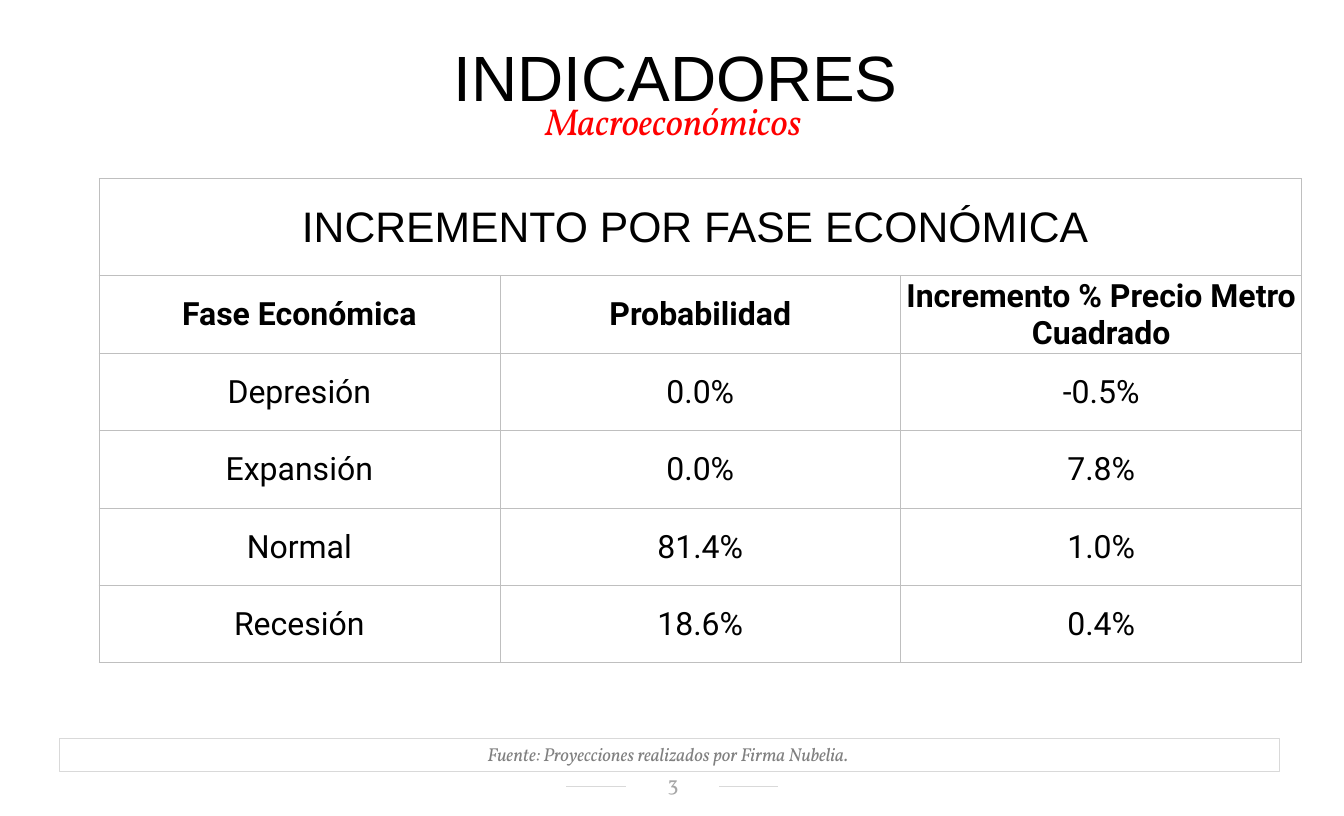
import dataclasses
import pptx
import pptx.dml.color
import pptx.enum.shapes
import pptx.enum.text
import pptx.oxml
import pptx.oxml.ns
import pptx.util

COLUMNS, ROWS = 140, 85
COLORS = {
    "black": "000000",
    "red": "FF0000",
    "source": "808080",
    "number": "A6A6A6",
    "rule": "D9D9D9",
    "border": "BFBFBF",
}
TOP = pptx.enum.text.MSO_ANCHOR.TOP
MIDDLE = pptx.enum.text.MSO_ANCHOR.MIDDLE


@dataclasses.dataclass(frozen=True)
class Area:
    column: float
    row: float
    columns: float
    rows: float


@dataclasses.dataclass(frozen=True)
class Style:
    font: str
    size: float
    color: str
    bold: bool = False
    italic: bool = False


TITLE = Style("Arial", 48, "black")
SUBTITLE = Style("Vollkorn", 28, "red", italic=True)
SOURCE = Style("Vollkorn", 14, "source", italic=True)
NUMBER = Style("Vollkorn", 16, "number")
CAPTION = Style("Arial", 32, "black")
HEADING = Style("Roboto", 24, "black", bold=True)
VALUE = Style("Roboto", 24, "black")

PHASES = [
    ("Fase Económica", "Probabilidad", "Incremento % Precio Metro Cuadrado"),
    ("Depresión", "0.0%", "-0.5%"),
    ("Expansión", "0.0%", "7.8%"),
    ("Normal", "81.4%", "1.0%"),
    ("Recesión", "18.6%", "0.4%"),
]

deck = pptx.Presentation()
deck.slide_width = pptx.util.Inches(14)
deck.slide_height = pptx.util.Inches(8.5)


def across(columns: float) -> int:
    return round(deck.slide_width * columns / COLUMNS)


def down(rows: float) -> int:
    return round(deck.slide_height * rows / ROWS)


def bounds(area: Area) -> tuple[int, int, int, int]:
    return across(area.column), down(area.row), across(area.columns), down(area.rows)


def rgb(name: str) -> pptx.dml.color.RGBColor:
    return pptx.dml.color.RGBColor.from_string(COLORS[name])


def write(frame, text: str, style: Style, anchor=TOP):
    frame.word_wrap = True
    frame.vertical_anchor = anchor
    para = frame.paragraphs[0]
    para.alignment = pptx.enum.text.PP_ALIGN.CENTER
    span = para.add_run()
    span.text = text
    span.font.name = style.font
    span.font.size = pptx.util.Pt(style.size)
    span.font.bold = style.bold
    span.font.italic = style.italic
    span.font.color.rgb = rgb(style.color)
    return para


def add_text(page, area: Area, text: str, style: Style, anchor=TOP):
    box = page.shapes.add_textbox(*bounds(area))
    write(box.text_frame, text, style, anchor)
    return box


def add_title(page, area: Area, text: str) -> None:
    title = page.shapes.title
    title.left, title.top, title.width, title.height = bounds(area)
    frame = title.text_frame
    frame.auto_size = pptx.enum.text.MSO_AUTO_SIZE.NONE
    frame.margin_left = frame.margin_right = pptx.util.Inches(0.13)
    frame.margin_top = frame.margin_bottom = pptx.util.Inches(0.07)
    write(frame, text, TITLE).line_spacing = 0.7


def add_rule(page, start: float, end: float, row: float) -> None:
    rule = page.shapes.add_connector(
        pptx.enum.shapes.MSO_CONNECTOR.STRAIGHT,
        across(start), down(row), across(end), down(row),
    )
    rule.line.color.rgb = rgb("rule")
    rule.line.width = pptx.util.Pt(0.5)
    rule._element.spPr.append(
        pptx.oxml.parse_xml(f'<a:effectLst {pptx.oxml.ns.nsdecls("a")}/>')
    )


def add_source(page, area: Area, text: str) -> None:
    box = page.shapes.add_shape(
        pptx.enum.shapes.MSO_SHAPE.RECTANGLE, *bounds(area)
    )
    box.shadow.inherit = False
    box.fill.background()
    box.line.color.rgb = rgb("rule")
    box.line.width = pptx.util.Pt(0.75)
    write(box.text_frame, text, SOURCE)


def set_borders(cell) -> None:
    properties = cell._tc.get_or_add_tcPr()
    for position, side in enumerate(("lnL", "lnR", "lnT", "lnB")):
        border = pptx.oxml.parse_xml(
            f'<a:{side} {pptx.oxml.ns.nsdecls("a")} w="{pptx.util.Pt(0.5)}">'
            f'<a:solidFill><a:srgbClr val="{COLORS["border"]}"/></a:solidFill>'
            f"</a:{side}>"
        )
        properties.insert(position, border)


def add_phase_table(page, area: Area, caption: str, caption_rows: float) -> None:
    count = len(PHASES[0])
    table = page.shapes.add_table(len(PHASES) + 1, count, *bounds(area)).table
    table.first_row = table.horz_banding = False
    for column in table.columns:
        column.width = across(area.columns / count)
    for index, row in enumerate(table.rows):
        height = (area.rows - caption_rows) / len(PHASES) if index else caption_rows
        row.height = down(height)
    for cell in table.iter_cells():
        cell.fill.background()
        cell.vertical_anchor = MIDDLE
        cell.margin_left = cell.margin_right = pptx.util.Inches(0.01)
        cell.margin_top, cell.margin_bottom = pptx.util.Inches(0.01), 0
        set_borders(cell)
    table.cell(0, 0).merge(table.cell(0, count - 1))
    write(table.cell(0, 0).text_frame, caption, CAPTION, MIDDLE)
    for row, phase in enumerate(PHASES, start=1):
        style = HEADING if row == 1 else VALUE
        for column, text in enumerate(phase):
            write(table.cell(row, column).text_frame, text, style, MIDDLE)


def main() -> None:
    page = deck.slides.add_slide(deck.slide_layouts.get_by_name("Title Only"))
    for start, end in ((59, 65.2), (74.9, 81)):
        add_rule(page, start, end, 81.9)
    number = add_text(page, Area(65.1, 80.4, 9.8, 2.6), "3", NUMBER, MIDDLE)
    number.text_frame.margin_left = pptx.util.Inches(0.12)
    number.text_frame.margin_top = pptx.util.Inches(0.02)
    add_title(page, Area(0.6, 5.4, 139.6, 7), "INDICADORES")
    add_text(page, Area(0.5, 9.7, 140, 5.7), "Macroeconómicos ", SUBTITLE)
    add_source(
        page, Area(6.2, 76.9, 127.1, 3.5),
        "Fuente: Proyecciones realizados por Firma Nubelia. ",
    )
    add_phase_table(
        page, Area(10.3, 18.6, 125.3, 50.4), "INCREMENTO POR FASE ECONÓMICA ", 10.1
    )
    deck.save("out.pptx")


if __name__ == "__main__":
    main()
